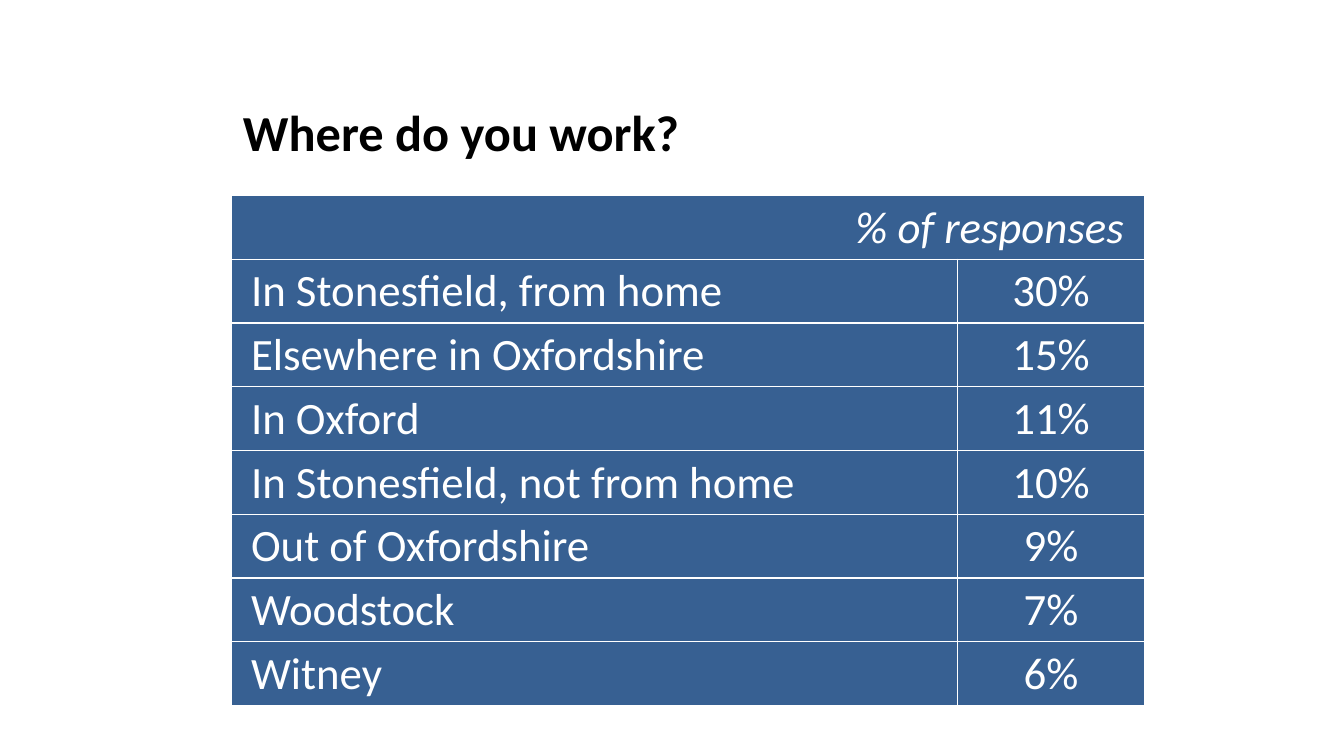
from pptx import Presentation
from pptx import util as u
from pptx.dml import color
from pptx.enum import text
from pptx.oxml import parse_xml
from pptx.oxml.ns import nsdecls

FONT = "Calibri"
WHITE, BLACK, BLUE = "FFFFFF", "000000", "376092"
HEADING = "% of responses"
RESPONSES = [
    ("In Stonesfield, from home", "30%"),
    ("Elsewhere in Oxfordshire", "15%"),
    ("In Oxford", "11%"),
    ("In Stonesfield, not from home", "10%"),
    ("Out of Oxfordshire", "9%"),
    ("Woodstock", "7%"),
    ("Witney", "6%"),
]


def rgb(hex_colour):
    return color.RGBColor.from_string(hex_colour)


def apply(target, formats):
    for name, value in formats.items():
        setattr(target, name, value)


def write(paragraph, words, colour, **formats):
    run = paragraph.add_run()
    run.text = words
    apply(run.font, {"name": FONT, **formats})
    run.font.color.rgb = rgb(colour)


def add_borders(cell, colour, width):
    properties = cell._tc.get_or_add_tcPr()
    for index, side in enumerate(("lnL", "lnR", "lnT", "lnB")):
        properties.insert(index, parse_xml(
            f'<a:{side} {nsdecls("a")} w="{u.Pt(width)}"><a:solidFill>'
            f'<a:srgbClr val="{colour}"/></a:solidFill></a:{side}>'))


def fill_cell(cell, words, alignment, right_margin=0.2, italic=False):
    cell.fill.solid()
    cell.fill.fore_color.rgb = rgb(BLUE)
    add_borders(cell, WHITE, 1)
    apply(cell, {
        "margin_left": u.Inches(0.2),
        "margin_top": u.Inches(0.01),
        "margin_right": u.Inches(right_margin),
        "margin_bottom": 0,
        "vertical_anchor": text.MSO_ANCHOR.MIDDLE,
    })
    paragraph = cell.text_frame.paragraphs[0]
    apply(paragraph, {"alignment": alignment, "space_after": u.Pt(6)})
    if words:
        write(paragraph, words, WHITE, size=u.Pt(32), italic=italic)


def add_title(slide, left, top, width, height):
    title = slide.shapes.title
    apply(title, {"left": u.Inches(left), "top": u.Inches(top),
                  "width": u.Inches(width), "height": u.Inches(height)})
    apply(title.text_frame, {"word_wrap": True,
                             "auto_size": text.MSO_AUTO_SIZE.NONE,
                             "vertical_anchor": text.MSO_ANCHOR.TOP})
    paragraph = title.text_frame.paragraphs[0]
    paragraph.alignment = text.PP_ALIGN.LEFT
    write(paragraph, "Where do you work?", BLACK, size=u.Pt(36), bold=True)


def add_response_table(slide, left, top, width, height):
    row_count = len(RESPONSES) + 1
    table = slide.shapes.add_table(
        row_count, 2, u.Inches(left), u.Inches(top),
        u.Inches(width), u.Inches(height)).table
    apply(table, {"first_row": False, "horz_banding": False})
    share_width = 1.85
    table.columns[0].width = u.Inches(width - share_width)
    table.columns[1].width = u.Inches(share_width)
    for row in table.rows:
        row.height = u.Inches(height / row_count)

    align = text.PP_ALIGN
    table.cell(0, 0).merge(table.cell(0, 1))
    fill_cell(table.cell(0, 0), HEADING, align.RIGHT, italic=True)
    fill_cell(table.cell(0, 1), "", align.RIGHT)
    for row, (place, share) in enumerate(RESPONSES, start=1):
        fill_cell(table.cell(row, 0), place, align.LEFT, right_margin=0.01)
        fill_cell(table.cell(row, 1), share, align.CENTER)


def main():
    presentation = Presentation()
    apply(presentation, {"slide_width": u.Inches(13.33),
                         "slide_height": u.Inches(7.5)})
    slide = presentation.slides.add_slide(presentation.slide_layouts[5])
    add_title(slide, 2.31, 0.95, 7.16, 0.71)
    add_response_table(slide, 2.29, 1.94, 9.06, 5.06)
    presentation.save("out.pptx")


if __name__ == "__main__":
    main()
